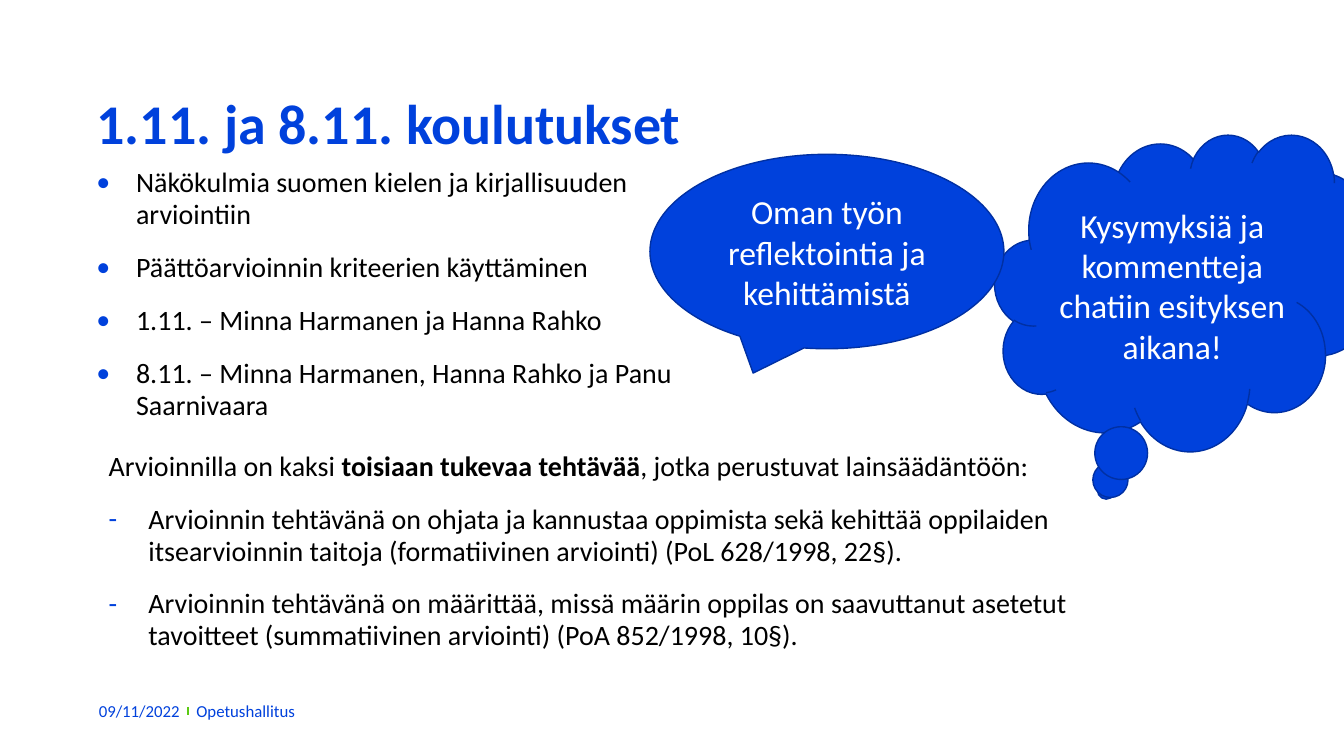
from dataclasses import dataclass

from lxml.etree import SubElement
from pptx import Presentation
from pptx.dml.color import RGBColor
from pptx.enum.shapes import MSO_CONNECTOR, MSO_SHAPE
from pptx.enum.text import MSO_ANCHOR as Anchor, MSO_AUTO_SIZE as AutoSize, PP_ALIGN as Align
from pptx.oxml.ns import qn
from pptx.slide import Slide
from pptx.util import Cm, Pt


@dataclass(frozen=True)
class Theme:
    font: str = "Calibri"
    blue: str = "0041DC"
    outline: str = "0030A3"
    green: str = "5BCA13"
    black: str = "000000"
    white: str = "FFFFFF"
    title_size: int = 40
    callout_size: int = 24
    body_size: int = 20
    footer_size: int = 12


THEME = Theme()


@dataclass(frozen=True)
class Box:
    left: float
    top: float
    width: float
    height: float

    def lengths(self) -> tuple:
        return Cm(self.left), Cm(self.top), Cm(self.width), Cm(self.height)


@dataclass(frozen=True)
class Run:
    text: str
    bold: bool = False


@dataclass(frozen=True)
class Item:
    runs: tuple[Run, ...]
    bullet: str = ""


@dataclass(frozen=True)
class ItemList:
    box: Box
    items: tuple[Item, ...]


@dataclass(frozen=True)
class Callout:
    outline: MSO_SHAPE
    box: Box
    text: str


@dataclass(frozen=True)
class FooterField:
    box: Box
    text: str


TITLE = "1.11. ja 8.11. koulutukset"
TITLE_BOX = Box(2.18, 2.29, 16.23, 2.74)

TOPICS = ItemList(Box(2.18, 4.09, 16.54, 7.26), tuple(
    Item((Run(text),), "•") for text in (
        "Näkökulmia suomen kielen ja kirjallisuuden arviointiin",
        "Päättöarvioinnin kriteerien käyttäminen",
        "1.11. – Minna Harmanen ja Hanna Rahko",
        "8.11. – Minna Harmanen, Hanna Rahko ja Panu Saarnivaara",
    )))

DUTIES = ItemList(Box(2.49, 11.23, 27.58, 5.38), (
    Item((Run("Arvioinnilla on kaksi "),
          Run("toisiaan tukevaa tehtävää", bold=True),
          Run(", jotka perustuvat lainsäädäntöön:"))),
    Item((Run("Arvioinnin tehtävänä on ohjata ja kannustaa oppimista sekä kehittää oppilaiden "
              "itsearvioinnin taitoja (formatiivinen arviointi) (PoL 628/1998, 22§)."),), "-"),
    Item((Run("Arvioinnin tehtävänä on määrittää, missä määrin oppilas on saavuttanut asetetut "
              "tavoitteet (summatiivinen arviointi) (PoA 852/1998, 10§)."),), "-"),
))

CALLOUTS = (
    Callout(MSO_SHAPE.CLOUD_CALLOUT, Box(25.07, 3.38, 9.63, 7.98),
            "Kysymyksiä ja kommentteja chatiin esityksen aikana!"),
    Callout(MSO_SHAPE.OVAL_CALLOUT, Box(16.38, 3.89, 8.92, 4.9),
            "Oman työn reflektointia ja kehittämistä"),
)

FOOTER = (
    FooterField(Box(2.49, 17.53, 2.46, 0.74), "09/11/2022"),
    FooterField(Box(4.95, 17.53, 12.01, 0.74), "Opetushallitus"),
)


def add_run(paragraph, text: str, size: int, color: str, bold: bool = False) -> None:
    run = paragraph.add_run()
    run.text = text
    run.font.name = THEME.font
    run.font.size = Pt(size)
    run.font.bold = bold
    run.font.color.rgb = RGBColor.from_string(color)


def add_bullet(paragraph, mark: str) -> None:
    properties = paragraph._p.get_or_add_pPr()
    properties.set("marL", str(Cm(1)))
    properties.set("indent", str(-Cm(1)))
    color = SubElement(properties, qn("a:buClr"))
    SubElement(color, qn("a:srgbClr"), val=THEME.blue)
    SubElement(properties, qn("a:buFont"), typeface=THEME.font)
    SubElement(properties, qn("a:buChar"), char=mark)


def draw_title(slide: Slide) -> None:
    title = slide.shapes.title
    title.left, title.top, title.width, title.height = TITLE_BOX.lengths()
    frame = title.text_frame
    frame.auto_size = AutoSize.NONE
    frame.word_wrap = True
    frame.vertical_anchor = Anchor.TOP
    paragraph = frame.paragraphs[0]
    paragraph.alignment = Align.LEFT
    paragraph.line_spacing = 0.9
    add_run(paragraph, TITLE, THEME.title_size, THEME.blue, bold=True)


def draw_items(slide: Slide, content: ItemList) -> None:
    frame = slide.shapes.add_textbox(*content.box.lengths()).text_frame
    frame.word_wrap = True
    for index, item in enumerate(content.items):
        paragraph = frame.add_paragraph() if index else frame.paragraphs[0]
        if item.bullet:
            add_bullet(paragraph, item.bullet)
        paragraph.line_spacing = 0.95
        paragraph.space_after = Pt(15)
        for run in item.runs:
            add_run(paragraph, run.text, THEME.body_size, THEME.black, run.bold)


def draw_callout(slide: Slide, callout: Callout) -> None:
    bubble = slide.shapes.add_shape(callout.outline, *callout.box.lengths())
    bubble.shadow.inherit = False
    bubble.fill.solid()
    bubble.fill.fore_color.rgb = RGBColor.from_string(THEME.blue)
    bubble.line.color.rgb = RGBColor.from_string(THEME.outline)
    bubble.line.width = Pt(1)
    frame = bubble.text_frame
    frame.word_wrap = True
    frame.vertical_anchor = Anchor.MIDDLE
    paragraph = frame.paragraphs[0]
    paragraph.alignment = Align.CENTER
    add_run(paragraph, callout.text, THEME.callout_size, THEME.white)


def draw_footer_field(slide: Slide, field: FooterField) -> None:
    frame = slide.shapes.add_textbox(*field.box.lengths()).text_frame
    frame.word_wrap = True
    frame.vertical_anchor = Anchor.MIDDLE
    frame.margin_left = frame.margin_right = frame.margin_top = frame.margin_bottom = 0
    add_run(frame.paragraphs[0], field.text, THEME.footer_size, THEME.blue)


def draw_footer_divider(slide: Slide) -> None:
    divider = slide.shapes.add_connector(
        MSO_CONNECTOR.STRAIGHT, Cm(4.73), Cm(17.81), Cm(4.73), Cm(18.01))
    divider.line.color.rgb = RGBColor.from_string(THEME.green)
    divider.line.width = Pt(1.25)
    SubElement(divider._element.spPr, qn("a:effectLst"))


def main() -> None:
    deck = Presentation()
    deck.slide_width, deck.slide_height = Cm(33.87), Cm(19.05)
    slide = deck.slides.add_slide(deck.slide_layouts[5])

    # Title and training topics
    draw_title(slide)
    draw_items(slide, TOPICS)

    # Footer
    draw_footer_divider(slide)
    for field in FOOTER:
        draw_footer_field(slide, field)

    # Callouts and the duties of assessment
    for callout in CALLOUTS:
        draw_callout(slide, callout)
    draw_items(slide, DUTIES)

    deck.save("out.pptx")


if __name__ == "__main__":
    main()
